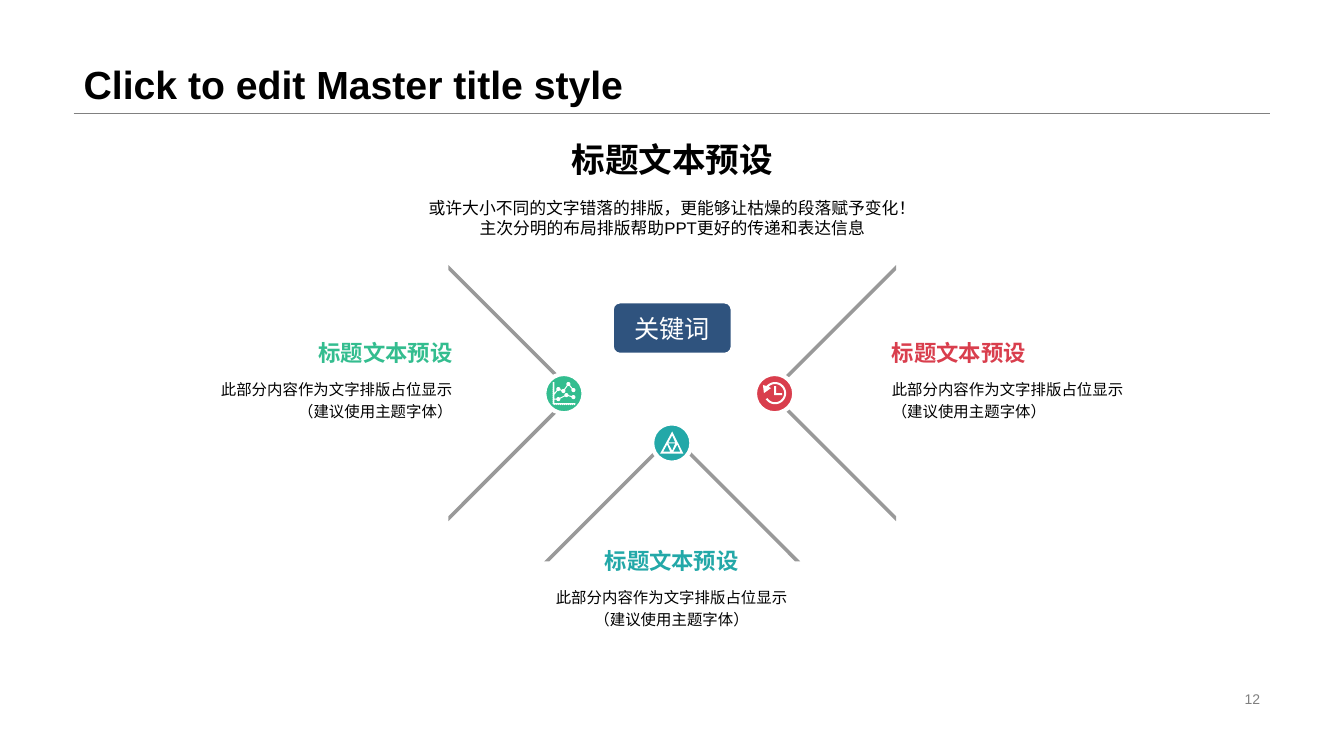
from math import cos, hypot, radians, sin

from lxml import etree
from pptx import Presentation
from pptx.dml.color import RGBColor
from pptx.enum.shapes import MSO_CONNECTOR, MSO_SHAPE
from pptx.enum.text import MSO_ANCHOR, MSO_AUTO_SIZE, PP_ALIGN
from pptx.oxml.ns import qn
from pptx.util import Cm, Pt

LEFT, CENTER, RIGHT = PP_ALIGN.LEFT, PP_ALIGN.CENTER, PP_ALIGN.RIGHT
TOP, MIDDLE, BOTTOM = MSO_ANCHOR.TOP, MSO_ANCHOR.MIDDLE, MSO_ANCHOR.BOTTOM
OVAL, ROUNDED = MSO_SHAPE.OVAL, MSO_SHAPE.ROUNDED_RECTANGLE
STRAIGHT = MSO_CONNECTOR.STRAIGHT
UNIT = 2.54  # centimetres per layout unit

BLACK, WHITE, GRAY, BRACKET = "000000", "FFFFFF", "808080", "999999"
NAVY, TEAL, GREEN, RED = "2F537E", "23A8A8", "33BD8F", "D93E4D"
HEADING = "标题文本预设"
DETAIL = "此部分内容作为文字排版占位显示\v（建议使用主题字体）"


def color(value):
    return RGBColor.from_string(value)


def size(value):
    return Cm(value * UNIT)


class Page:
    """Holds the text style and the slide being drawn."""

    def __init__(self, deck, font="Arial"):
        self.slide = deck.slides.add_slide(deck.slide_layouts[5])
        self.shapes = self.slide.shapes
        self.font = font

    def fill_text(self, box, text, points, ink, align=LEFT, anchor=MIDDLE,
                  bold=False, wrap=True, spacing=None):
        frame = box.text_frame
        frame.text = text
        frame.word_wrap = wrap
        frame.auto_size = MSO_AUTO_SIZE.NONE
        frame.vertical_anchor = anchor
        for para in frame.paragraphs:
            para.alignment = align
            if spacing:
                para.line_spacing = spacing
            for span in para.runs:
                span.font.name = self.font
                span.font.size = Pt(points)
                span.font.bold = bold
                span.font.color.rgb = color(ink)

    def title(self, text, place, **style):
        box = self.shapes.title
        box.left, box.top, box.width, box.height = map(size, place)
        self.fill_text(box, text, **style)

    def text(self, text, place, **style):
        self.fill_text(self.shapes.add_textbox(*map(size, place)), text, **style)

    def rule(self, start, end, ink, points):
        line = self.shapes.add_connector(STRAIGHT, *map(size, start + end))
        line.line.color.rgb = color(ink)
        line.line.width = Pt(points)
        etree.SubElement(line._element.spPr, qn("a:effectLst"))

    def shape(self, kind, place, fill, border):
        box = self.shapes.add_shape(kind, *map(size, place))
        self.paint(box, fill)
        box.line.color.rgb = color(WHITE)
        box.line.width = Pt(border)
        return box

    def outline(self, contours, fill):
        """Draw closed contours as one filled outline."""
        scaled = [[(size(x), size(y)) for x, y in points] for points in contours]
        builder = self.shapes.build_freeform(*scaled[0][0])
        for index, points in enumerate(scaled):
            if index:
                builder.move_to(*points[0])
            builder.add_line_segments(points[1:], close=True)
        box = builder.convert_to_shape()
        self.paint(box, fill)
        box.line.fill.background()

    def paint(self, box, fill):
        box.shadow.inherit = False
        box.fill.solid()
        box.fill.fore_color.rgb = color(fill)

    def bracket(self, apex, direction):
        """Draw a right-angled bracket opening in the given direction."""
        (x, y), (dx, dy) = apex, direction
        profile = [(0, 0), (1.27, 1.27), (1.27, 1.22), (0.05, 0),
                   (1.27, -1.22), (1.27, -1.27)]
        self.outline([[(x + u * dx - v * dy, y + u * dy + v * dx)
                       for u, v in profile]], BRACKET)

    def topic(self, ink, align, left, top, apex, direction, badge, icon):
        self.bracket(apex, direction)
        self.text(DETAIL, (left, top + 0.355, 2.77, 0.79), points=11, ink=BLACK,
                  align=align, anchor=TOP, spacing=1.2)
        self.text(HEADING, (left, top, 2.77, 0.35), points=16, ink=ink,
                  align=align, anchor=BOTTOM, bold=True, wrap=False)
        self.shape(OVAL, badge + (0.39, 0.39), ink, 3)
        self.outline(icon, WHITE)


def arc(center, radius, start, end, steps=36):
    angles = [radians(start + (end - start) * i / steps) for i in range(steps + 1)]
    return [(center[0] + radius * cos(a), center[1] + radius * sin(a))
            for a in angles]


def clock_icon():
    center = (7.69, 3.9)
    arrow = [(7.57, 3.82), (7.58, 3.9), (7.65, 3.85), (7.63, 3.84)]
    ring = arc(center, 0.11, 147, -140) + arrow + arc(center, 0.09, -130, 147)
    hands = [(7.68, 3.83), (7.7, 3.83), (7.7, 3.9),
             (7.76, 3.9), (7.76, 3.92), (7.68, 3.92)]
    return [ring, hands]


def chart_icon():
    # Axes with notched outer edges
    side = [(5.48 if i % 2 else 5.49, 3.79 + 0.01 * i) for i in range(22)]
    base = [(5.49 + 0.01 * i, 4.02 if i % 2 else 4.01) for i in range(23)]
    contours = [side + base + [(5.71, 4), (5.5, 4), (5.5, 3.79)]]
    # Each series: an axis point, then markers joined by narrow links
    marker, half = 0.02, 0.01 / 2
    for series in ([(5.5, 3.91), (5.54, 3.86), (5.59, 3.88), (5.64, 3.81), (5.69, 3.87)],
                   [(5.5, 3.96), (5.54, 3.96), (5.62, 3.92), (5.69, 3.94)]):
        contours += [arc(point, marker, 0, 345, 23) for point in series[1:]]
        for index, ((x1, y1), (x2, y2)) in enumerate(zip(series, series[1:])):
            length = hypot(x2 - x1, y2 - y1)
            ux, uy = (x2 - x1) / length, (y2 - y1) / length
            near, far = (marker if index else 0), length - marker
            contours.append([(x1 + d * ux - s * uy, y1 + d * uy + s * ux)
                             for d, s in ((near, half), (far, half),
                                          (far, -half), (near, -half))])
    return contours


def triangle_icon():
    return [[(6.67, 4.28), (6.55, 4.5), (6.78, 4.5)],
            [(6.67, 4.32), (6.7, 4.39), (6.63, 4.39)],
            [(6.58, 4.48), (6.62, 4.41), (6.65, 4.48)],
            [(6.63, 4.4), (6.7, 4.4), (6.67, 4.47)],
            [(6.72, 4.41), (6.75, 4.48), (6.68, 4.48)]]


def main():
    deck = Presentation()
    deck.slide_width, deck.slide_height = Cm(33.87), Cm(19.05)
    page = Page(deck)

    # Header and page number
    page.rule((0.73, 1.12), (12.6, 1.12), GRAY, 0.25)
    page.title("Click to edit Master title style", (0.73, 0, 11.87, 1.12),
               points=28, ink=BLACK, anchor=BOTTOM, bold=True, spacing=0.9)
    page.text("12", (9.42, 6.82, 3.18, 0.23), points=10, ink=GRAY, align=RIGHT)

    # Introduction
    page.text(HEADING, (3.87, 1.31, 5.6, 0.53), points=24, ink=BLACK,
              align=CENTER, bold=True, wrap=False)
    page.text("或许大小不同的文字错落的排版，更能够让枯燥的段落赋予变化！\v"
              "主次分明的布局排版帮助PPT更好的传递和表达信息",
              (3.87, 1.84, 5.6, 0.64), points=12, ink=BLACK, align=CENTER)

    # Keyword
    keyword = page.shape(ROUNDED, (6.08, 3, 1.18, 0.51), NAVY, 1.5)
    keyword.adjustments[0] = 0.14
    page.fill_text(keyword, "关键词", 18, WHITE, align=CENTER, wrap=False)

    # Three topics around the keyword
    page.topic(TEAL, CENTER, 5.28, 5.39, (6.67, 4.3), (0, 1), (6.47, 4.2),
               triangle_icon())
    page.topic(GREEN, RIGHT, 1.82, 3.33, (5.72, 3.9), (-1, 0), (5.4, 3.71),
               chart_icon())
    page.topic(RED, LEFT, 8.75, 3.33, (7.62, 3.9), (1, 0), (7.49, 3.71),
               clock_icon())

    deck.save("out.pptx")


if __name__ == "__main__":
    main()
